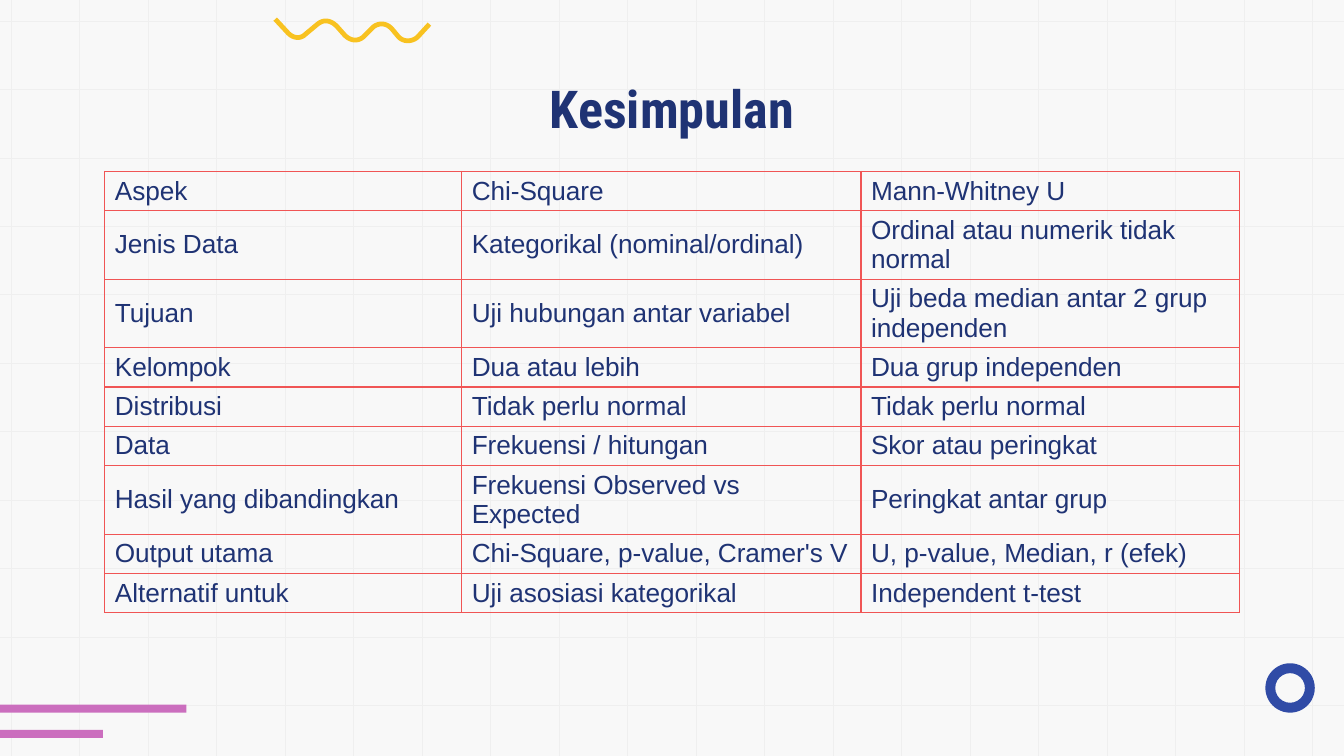
from pptx import Presentation
from pptx.dml.color import RGBColor
from pptx.enum.shapes import MSO_CONNECTOR as Connector, MSO_SHAPE as Shape
from pptx.enum.text import MSO_ANCHOR as Anchor, MSO_AUTO_SIZE as AutoSize, PP_ALIGN as Align
from pptx.oxml.ns import qn
from pptx.util import Inches, Pt
from lxml.etree import SubElement

TITLE = "Kesimpulan"
ROWS = [
    ("Aspek", "Chi-Square", "Mann-Whitney U"),
    ("Jenis Data", "Kategorikal (nominal/ordinal)", "Ordinal atau numerik tidak normal"),
    ("Tujuan", "Uji hubungan antar variabel", "Uji beda median antar 2 grup independen"),
    ("Kelompok", "Dua atau lebih", "Dua grup independen"),
    ("Distribusi", "Tidak perlu normal", "Tidak perlu normal"),
    ("Data", "Frekuensi / hitungan", "Skor atau peringkat"),
    ("Hasil yang dibandingkan", "Frekuensi Observed vs Expected", "Peringkat antar grup"),
    ("Output utama", "Chi-Square, p-value, Cramer's V", "U, p-value, Median, r (efek)"),
    ("Alternatif untuk", "Uji asosiasi kategorikal", "Independent t-test"),
]
COLUMN_WIDTHS = (3.54, 3.96, 3.75)
TWO_LINE_ROWS = (1, 2, 6)
ROW_HEIGHT, TALL_ROW_HEIGHT = 0.39, 0.68
COLORS = {
    "background": "F8F8F8", "grid": "EFEFEF", "bar": "CB6EBE", "ring": "304BA6",
    "wave": "F8C220", "text": "1F3374", "border": "F05555",
}
WIDTH, HEIGHT = 13.33, 7.5
GRID_LEFT, GRID_RIGHT, GRID_COLUMNS = 0.11, 13.02, 20
GRID_TOP, GRID_BOTTOM, GRID_ROWS = 0.21, 7, 11
BARS = [(6.99, 1.85), (7.24, 1.02)]
WAVE_START = (2.73, 0.19)
WAVE_BENDS = [
    ((2.86, 0.33), (2.91, 0.38), (2.98, 0.39), (3.03, 0.34)),
    ((3.15, 0.24), (3.21, 0.19), (3.28, 0.2), (3.34, 0.26)),
    ((3.42, 0.35), (3.48, 0.41), (3.55, 0.41), (3.6, 0.37)),
    ((3.7, 0.27), (3.76, 0.22), (3.84, 0.23), (3.89, 0.29)),
    ((3.94, 0.35), (3.99, 0.42), (4.08, 0.42), (4.14, 0.37)),
]
WAVE_END = (4.26, 0.24)
CURVE_STEPS = 12


def color(name):
    return RGBColor.from_string(COLORS[name])


def spread(first, last, count):
    return [first + i * (last - first) / (count - 1) for i in range(count)]


def add_grid_line(slide, x1, y1, x2, y2):
    line = slide.shapes.add_connector(
        Connector.STRAIGHT, Inches(x1), Inches(y1), Inches(x2), Inches(y2))
    line.line.color.rgb = color("grid")
    line.line.width = Pt(0.75)
    SubElement(line.element.spPr, qn("a:effectLst"))


def add_solid(slide, kind, name, left, top, width, height):
    shape = slide.shapes.add_shape(
        kind, Inches(left), Inches(top), Inches(width), Inches(height))
    shape.shadow.inherit = False
    shape.fill.solid()
    shape.fill.fore_color.rgb = color(name)
    shape.line.fill.background()
    return shape


def curve_point(bend, t):
    weights = ((1 - t) ** 3, 3 * t * (1 - t) ** 2, 3 * t ** 2 * (1 - t), t ** 3)
    return tuple(sum(w * point[axis] for w, point in zip(weights, bend)) for axis in (0, 1))


def add_wave(slide):
    curves = [curve_point(bend, step / CURVE_STEPS)
              for bend in WAVE_BENDS for step in range(CURVE_STEPS + 1)]
    start, *points = [(Inches(x), Inches(y)) for x, y in [WAVE_START, *curves, WAVE_END]]
    builder = slide.shapes.build_freeform(*start)
    builder.add_line_segments(points, close=False)
    wave = builder.convert_to_shape()
    wave.shadow.inherit = False
    wave.fill.background()
    wave.line.color.rgb = color("wave")
    wave.line.width = Pt(3.4)


def write(paragraph, text, font, size, bold):
    run = paragraph.add_run()
    run.text = text
    run.font.name = font
    run.font.size = Pt(size)
    run.font.bold = bold
    run.font.color.rgb = color("text")


def add_borders(cell):
    properties = cell._tc.get_or_add_tcPr()
    for position, side in enumerate(("lnL", "lnR", "lnT", "lnB")):
        border = properties.makeelement(qn(f"a:{side}"), {"w": str(Pt(1))})
        fill = SubElement(border, qn("a:solidFill"))
        SubElement(fill, qn("a:srgbClr"), val=COLORS["border"])
        properties.insert(position, border)


def add_title(slide):
    title = slide.shapes.title
    title.left, title.top = Inches(1.05), Inches(0.65)
    title.width, title.height = Inches(11.23), Inches(0.84)
    frame = title.text_frame
    frame.auto_size = AutoSize.NONE
    frame.vertical_anchor = Anchor.MIDDLE
    frame.margin_left = frame.margin_right = Inches(0.1)
    frame.margin_top = frame.margin_bottom = Inches(0.1)
    paragraph = frame.paragraphs[0]
    paragraph.alignment = Align.CENTER
    paragraph.line_spacing = 1.0
    write(paragraph, TITLE, "Roboto Condensed", 37.3, True)
    title.element.getparent().append(title.element)


def add_comparison(slide):
    heights = [TALL_ROW_HEIGHT if i in TWO_LINE_ROWS else ROW_HEIGHT for i in range(len(ROWS))]
    table = slide.shapes.add_table(
        len(ROWS), len(COLUMN_WIDTHS), Inches(1.04), Inches(1.7),
        Inches(sum(COLUMN_WIDTHS)), Inches(sum(heights))).table
    table.first_row = table.horz_banding = False
    for column, width in zip(table.columns, COLUMN_WIDTHS):
        column.width = Inches(width)
    for row, height, texts in zip(table.rows, heights, ROWS):
        row.height = Inches(height)
        for cell, text in zip(row.cells, texts):
            cell.fill.background()
            cell.vertical_anchor = Anchor.MIDDLE
            cell.margin_left = cell.margin_right = Inches(0.1)
            cell.margin_top = cell.margin_bottom = Inches(0.05)
            write(cell.text_frame.paragraphs[0], text, "Arial", 18.67, False)
            add_borders(cell)


def main():
    presentation = Presentation()
    presentation.slide_width, presentation.slide_height = Inches(WIDTH), Inches(HEIGHT)
    slide = presentation.slides.add_slide(presentation.slide_layouts[5])
    slide.background.fill.solid()
    slide.background.fill.fore_color.rgb = color("background")
    for y in spread(GRID_TOP, GRID_BOTTOM, GRID_ROWS):
        add_grid_line(slide, 0, y, WIDTH, y)
    for x in spread(GRID_LEFT, GRID_RIGHT, GRID_COLUMNS):
        add_grid_line(slide, x, 0, x, HEIGHT)
    for top, width in BARS:
        add_solid(slide, Shape.RECTANGLE, "bar", 0, top, width, 0.08)
    ring = add_solid(slide, Shape.DONUT, "ring", 12.55, 6.58, 0.49, 0.49)
    ring.adjustments[0] = 0.2
    add_wave(slide)
    add_title(slide)
    add_comparison(slide)
    presentation.save("out.pptx")


if __name__ == "__main__":
    main()
